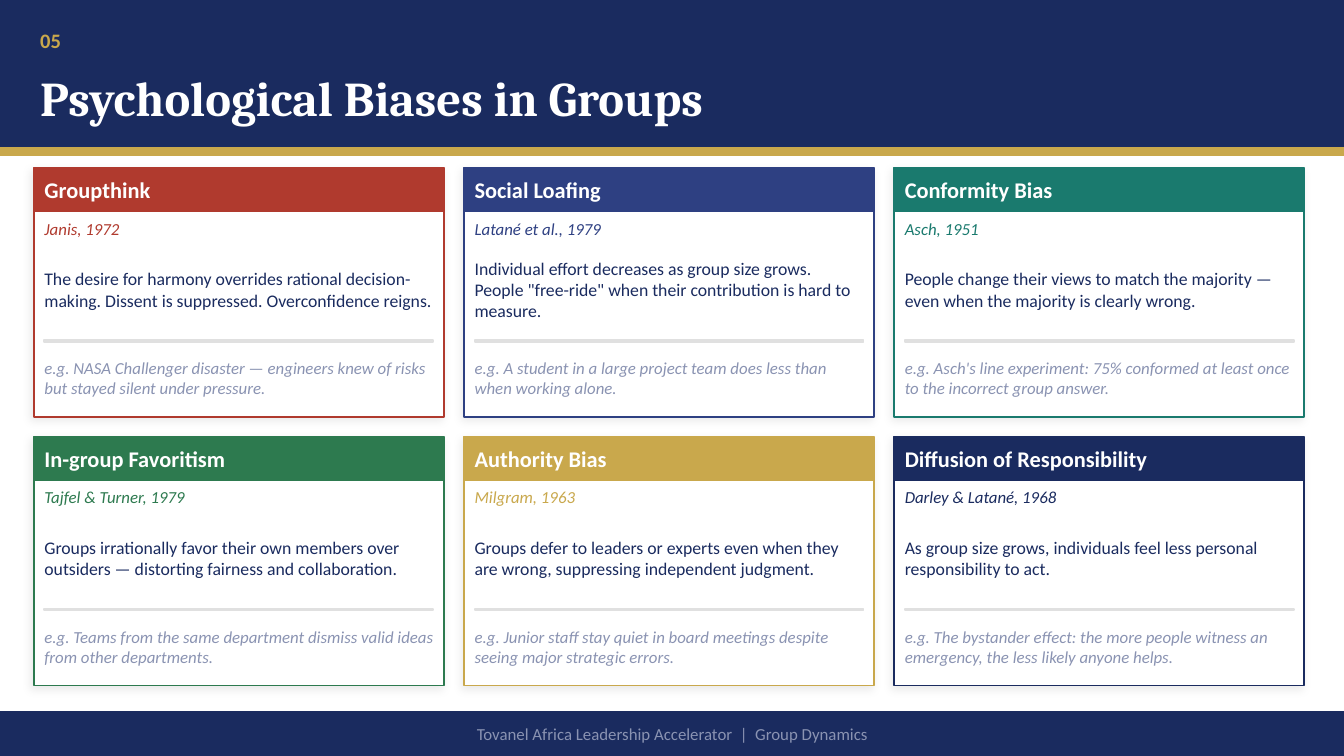
from dataclasses import dataclass

from lxml.etree import SubElement
from pptx import Presentation
from pptx.dml.color import RGBColor
from pptx.enum.shapes import MSO_SHAPE as Shape
from pptx.enum.text import MSO_ANCHOR as Anchor, PP_ALIGN as Align
from pptx.oxml.ns import qn
from pptx.util import Cm, Pt

NUMBER = "05"
TITLE = "Psychological Biases in Groups"
FOOTER = "Tovanel Africa Leadership Accelerator  |  Group Dynamics"

BIASES = [
    ("Groupthink", "Janis, 1972", "B03A2E",
     "The desire for harmony overrides rational decision-making. Dissent is suppressed. Overconfidence reigns.",
     "e.g. NASA Challenger disaster — engineers knew of risks but stayed silent under pressure."),
    ("Social Loafing", "Latané et al., 1979", "2E4082",
     "Individual effort decreases as group size grows. People \"free-ride\" when their contribution is hard to measure.",
     "e.g. A student in a large project team does less than when working alone."),
    ("Conformity Bias", "Asch, 1951", "1A7A6E",
     "People change their views to match the majority — even when the majority is clearly wrong.",
     "e.g. Asch's line experiment: 75% conformed at least once to the incorrect group answer."),
    ("In-group Favoritism", "Tajfel & Turner, 1979", "2D7A4F",
     "Groups irrationally favor their own members over outsiders — distorting fairness and collaboration.",
     "e.g. Teams from the same department dismiss valid ideas from other departments."),
    ("Authority Bias", "Milgram, 1963", "C9A84C",
     "Groups defer to leaders or experts even when they are wrong, suppressing independent judgment.",
     "e.g. Junior staff stay quiet in board meetings despite seeing major strategic errors."),
    ("Diffusion of Responsibility", "Darley & Latané, 1968", "1A2B5F",
     "As group size grows, individuals feel less personal responsibility to act.",
     "e.g. The bystander effect: the more people witness an emergency, the less likely anyone helps."),
]


@dataclass(frozen=True)
class Theme:
    navy: str = "1A2B5F"
    gold: str = "C9A84C"
    white: str = "FFFFFF"
    muted: str = "8A93B2"
    rule: str = "E0E0E0"
    heading_font: str = "Cambria"
    body_font: str = "Calibri"
    title_size: float = 26
    number_size: float = 11
    name_size: float = 12
    body_size: float = 9.5
    small_size: float = 9


THEME = Theme()
SLIDE_W, SLIDE_H = 25.4, 14.29
COLUMNS = 3
GRID_LEFT, GRID_TOP = 0.64, 3.18
CARD_W, CARD_H, GAP = 7.75, 4.7, 0.38
BAND_H, INSET = 0.81, 0.2


def add_box(slide, left, top, width, height, fill, edge=None):
    box = slide.shapes.add_shape(Shape.RECTANGLE, Cm(left), Cm(top), Cm(width), Cm(height))
    box.fill.solid()
    box.fill.fore_color.rgb = RGBColor.from_string(fill)
    box.line.color.rgb = RGBColor.from_string(edge or fill)
    box.line.width = Pt(1)
    box.shadow.inherit = False
    return box


def add_soft_shadow(box):
    effects = box._element.spPr.find(qn("a:effectLst"))
    shadow = SubElement(effects, qn("a:outerShdw"), blurRad=str(Pt(5)), dist=str(Pt(2)),
                        dir="8100000", algn="bl", rotWithShape="0")
    color = SubElement(shadow, qn("a:srgbClr"), val="000000")
    SubElement(color, qn("a:alpha"), val="8000")


def add_text(slide, left, top, width, height, text, size, color,
             font=THEME.body_font, bold=False, italic=False, align=Align.LEFT):
    frame = slide.shapes.add_textbox(Cm(left), Cm(top), Cm(width), Cm(height)).text_frame
    frame.word_wrap = True
    frame.vertical_anchor = Anchor.MIDDLE
    frame.margin_left = frame.margin_right = frame.margin_top = frame.margin_bottom = 0
    line = frame.paragraphs[0]
    line.text = text
    line.alignment = align
    line.font.name = font
    line.font.size = Pt(size)
    line.font.bold = bold
    line.font.italic = italic
    line.font.color.rgb = RGBColor.from_string(color)


def add_card(slide, left, top, bias):
    name, study, accent, meaning, example = bias
    inner_left, inner_w = left + INSET, CARD_W - 2 * INSET
    add_soft_shadow(add_box(slide, left, top, CARD_W, CARD_H, THEME.white, accent))
    add_box(slide, left, top, CARD_W, BAND_H, accent)
    add_text(slide, inner_left, top, inner_w, BAND_H, name, THEME.name_size, THEME.white, bold=True)
    add_text(slide, inner_left, top + 0.86, inner_w, 0.56, study, THEME.small_size, accent, italic=True)
    add_text(slide, inner_left, top + 1.4, inner_w, 1.78, meaning, THEME.body_size, THEME.navy)
    add_box(slide, inner_left, top + 3.25, inner_w, 0.03, THEME.rule)
    add_text(slide, inner_left, top + 3.38, inner_w, 1.17, example, THEME.small_size, THEME.muted, italic=True)


def main():
    """Build the slide on psychological biases in groups."""
    deck = Presentation()
    deck.slide_width, deck.slide_height = Cm(SLIDE_W), Cm(SLIDE_H)
    slide = deck.slides.add_slide(deck.slide_layouts[6])

    add_box(slide, 0, 0, SLIDE_W, 2.79, THEME.navy)
    add_box(slide, 0, 2.79, SLIDE_W, 0.15, THEME.gold)
    add_text(slide, 0.76, 0.25, 1.52, 1.02, NUMBER, THEME.number_size, THEME.gold, bold=True)
    add_text(slide, 0.76, 1.14, 22.86, 1.4, TITLE, THEME.title_size, THEME.white,
             font=THEME.heading_font, bold=True)

    for index, bias in enumerate(BIASES):
        row, column = divmod(index, COLUMNS)
        add_card(slide, GRID_LEFT + column * (CARD_W + GAP), GRID_TOP + row * (CARD_H + GAP), bias)

    footer_top = 13.46
    add_box(slide, 0, footer_top, SLIDE_W, BAND_H, THEME.navy)
    add_text(slide, 0, footer_top, SLIDE_W, BAND_H, FOOTER, THEME.small_size, THEME.muted,
             align=Align.CENTER)

    deck.save("out.pptx")


if __name__ == "__main__":
    main()
